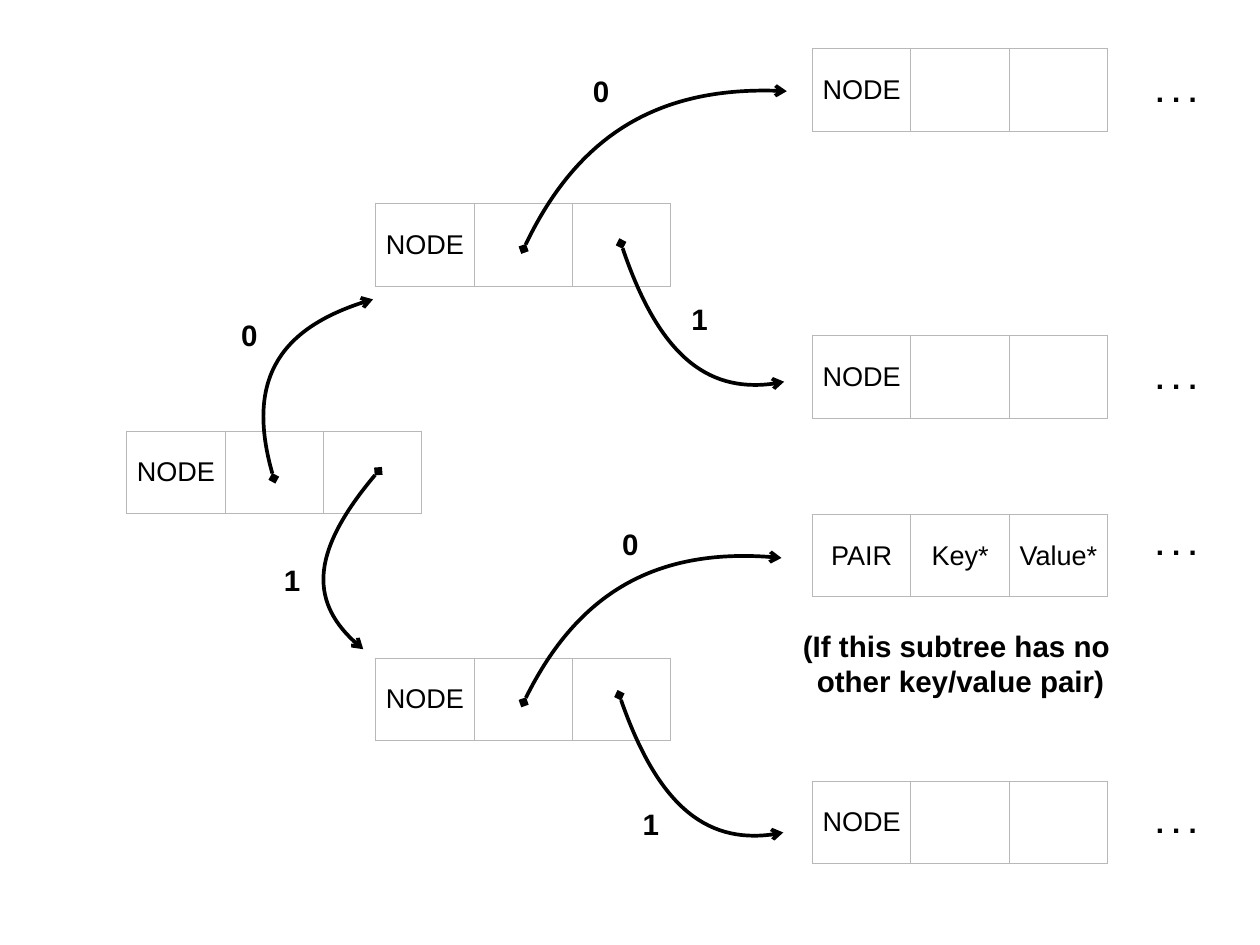
from lxml import etree
from pptx import Presentation
from pptx import util as u
from pptx.dml.color import RGBColor
from pptx.enum import text
from pptx.oxml import ns
from pptx.util import Inches

BLACK = RGBColor(0x00, 0x00, 0x00)
WHITE = RGBColor(0xFF, 0xFF, 0xFF)
GRAY = RGBColor(0xB8, 0xB8, 0xB8)

CELL_W, CELL_H, PAD = 1.11, 0.93, 0.06
LEFT, MID, RIGHT = 1.43, 4.24, 9.17  # tree levels
NODE = ("NODE", "", "")
STEPS = 24

CELL = dict(vertical_anchor=text.MSO_ANCHOR.MIDDLE)
FRAME = dict(vertical_anchor=text.MSO_ANCHOR.MIDDLE, word_wrap=False,
             auto_size=text.MSO_AUTO_SIZE.SHAPE_TO_FIT_TEXT)
PADS = {"margin_" + side: Inches(PAD)
        for side in ("left", "right", "top", "bottom")}
PLAIN = dict(name="Arial", size=u.Pt(22), bold=False)
BOLD = dict(name="Arial", size=u.Pt(24), bold=True)

# Left, top and cell texts of each box
BOXES = [
    (LEFT, 4.87, NODE),
    (MID, 2.3, NODE),
    (MID, 7.43, NODE),
    (RIGHT, 0.55, NODE),
    (RIGHT, 3.79, NODE),
    (RIGHT, 5.81, ("PAIR", "Key*", "Value*")),
    (RIGHT, 8.82, NODE),
]

# Start, two control points and end of each branch
CURVES = [
    [(3.09, 5.4), (2.77, 4.35), (3.15, 3.68), (4.21, 3.38)],
    [(5.91, 2.81), (6.5, 1.54), (7.49, 0.95), (8.88, 1.03)],
    [(5.91, 7.93), (6.5, 6.7), (7.47, 6.16), (8.82, 6.3)],
    [(4.27, 5.32), (3.53, 6.18), (3.47, 6.84), (4.1, 7.33)],
    [(6.99, 7.85), (7.4, 9.06), (8.02, 9.58), (8.84, 9.4)],
    [(7.01, 2.75), (7.41, 3.97), (8.03, 4.49), (8.85, 4.31)],
]

# Branch bits: left, top, digit
BITS = [
    (2.66, 3.53, "0"), (6.63, 0.77, "0"), (6.96, 5.89, "0"),
    (3.14, 6.29, "1"), (7.74, 3.35, "1"), (7.19, 9.05, "1"),
]
DOTS = (0.77, 4.01, 5.89, 9.03)  # tops of the ellipses


def apply(item, *styles):
    for style in styles:
        for key, value in style.items():
            setattr(item, key, value)


def add_tag(parent, name, **attrs):
    return etree.SubElement(parent, ns.qn("a:" + name), attrs)


def write(frame, words, font):
    frame.text = words
    for para in frame.paragraphs:
        para.alignment = text.PP_ALIGN.CENTER
        apply(para.font, font)
        para.font.color.rgb = BLACK


def add_border(cell):
    props = cell._tc.get_or_add_tcPr()
    for side in "LRTB":
        line = add_tag(props, "ln" + side, w=str(u.Pt(1)))
        add_tag(add_tag(line, "solidFill"), "srgbClr", val=str(GRAY))


def add_box(slide, left, top, words):
    table = slide.shapes.add_table(
        1, len(words), Inches(left), Inches(top),
        Inches(CELL_W * len(words)), Inches(CELL_H)).table
    apply(table, dict(first_row=False, horz_banding=False))
    for col, word in enumerate(words):
        table.columns[col].width = Inches(CELL_W)
        cell = table.cell(0, col)
        apply(cell, CELL, PADS)
        write(cell.text_frame, word, PLAIN)
        add_border(cell)
        cell.fill.solid()
        cell.fill.fore_color.rgb = WHITE


def get_point(curve, t):
    """Point at t on a cubic curve."""
    parts = ((1 - t) ** 3, 3 * t * (1 - t) ** 2, 3 * t * t * (1 - t), t ** 3)
    return tuple(Inches(sum(p * spot[axis] for p, spot in zip(parts, curve)))
                 for axis in (0, 1))


def add_curve(slide, curve):
    # Sampled points give the outline its true bounds
    dots = [get_point(curve, n / STEPS) for n in range(STEPS + 1)]
    maker = slide.shapes.build_freeform(*dots[0])
    maker.add_line_segments(dots[1:], close=False)
    shape = maker.convert_to_shape()

    # One smooth segment takes the place of the samples
    track = shape._element.find(".//" + ns.qn("a:path"))
    for part in track.findall(ns.qn("a:lnTo")):
        track.remove(part)
    bend = add_tag(track, "cubicBezTo")
    for x, y in curve[1:]:
        add_tag(bend, "pt", x=str(Inches(x) - shape.left),
                y=str(Inches(y) - shape.top))

    # Line with a diamond at its start and an arrow at its end
    shape.shadow.inherit = False
    shape.fill.background()
    shape.line.color.rgb = BLACK
    shape.line.width = u.Pt(3)
    line = shape.line._get_or_add_ln()
    add_tag(line, "headEnd", type="diamond")
    add_tag(line, "tailEnd", type="arrow")


def add_label(slide, left, top, width, height, words):
    box = slide.shapes.add_textbox(
        Inches(left), Inches(top), Inches(width), Inches(height))
    apply(box.text_frame, FRAME, PADS)
    write(box.text_frame, words, BOLD)


def main():
    deck = Presentation()
    apply(deck, dict(slide_width=Inches(14.22), slide_height=Inches(10.67)))
    slide = deck.slides.add_slide(deck.slide_layouts[6])

    # Nodes and branches
    for box in BOXES:
        add_box(slide, *box)
    for curve in CURVES:
        add_curve(slide, curve)

    # Labels
    for left, top, digit in BITS:
        add_label(slide, left, top, 0.31, 0.5, digit)
    for top in DOTS:
        add_label(slide, 12.98, top, 0.59, 0.5, ". . .")
    add_label(slide, 8.97, 7.03, 3.74, 0.91,
              "(If this subtree has no \nother key/value pair)")

    deck.save("out.pptx")


if __name__ == "__main__":
    main()
